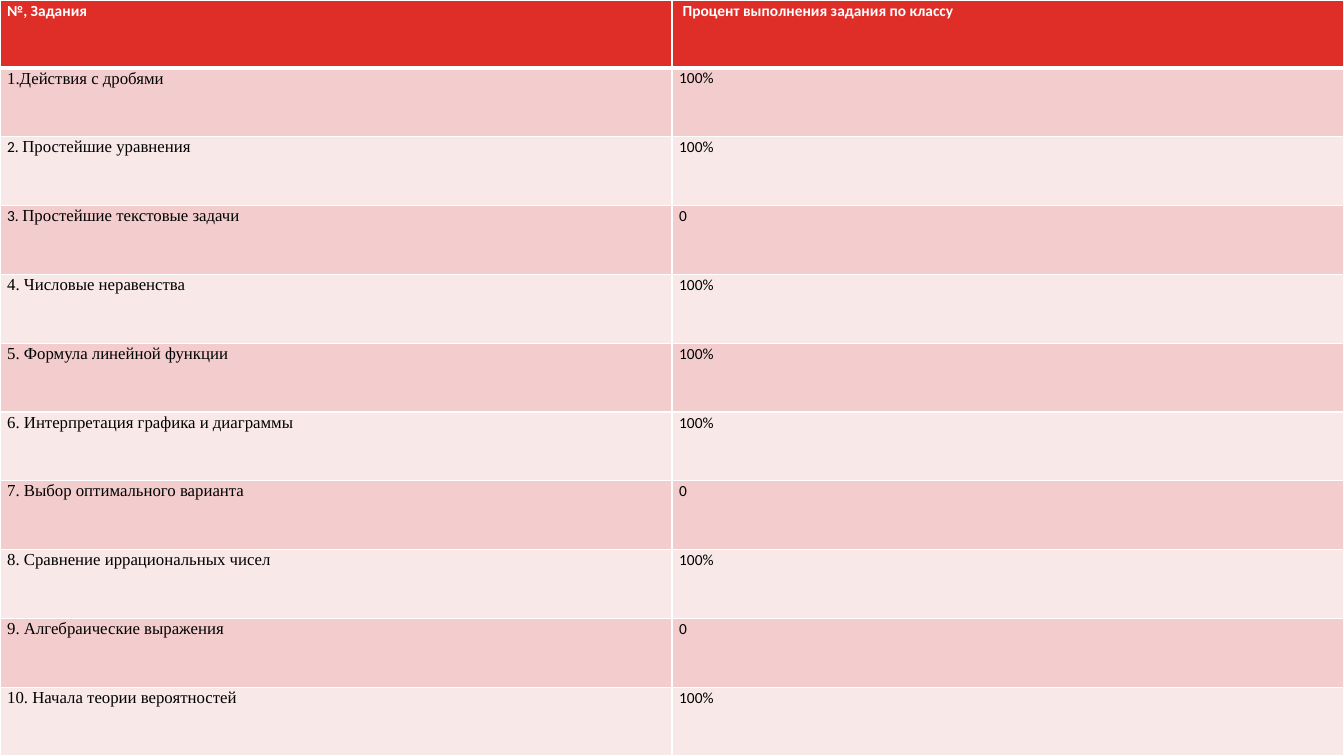
import pptx
import pptx.dml.color
import pptx.oxml
import pptx.oxml.ns
import pptx.util
from pptx.util import Cm

COLORS = {
    "background": "000000",
    "header": "DF2E28",
    "odd_row": "F3CDCD",
    "even_row": "F9E8E8",
    "border": "FFFFFF",
    "header_text": "FFFFFF",
    "text": "000000",
}
SANS = ("Calibri", 11)
SERIF = ("Times New Roman", 12)
SLIDE_WIDTH, SLIDE_HEIGHT = Cm(33.87), Cm(19.05)
HEADER_HEIGHT = Cm(1.71)

HEADERS = ["№, Задания", " Процент выполнения задания по классу"]
# Each task: runs of (text, font), then the share of the class that solved it
TASKS = [
    ([("1.Действия с дробями", SERIF)], "100%"),
    ([("2. ", SANS), ("Простейшие уравнения", SERIF)], "100%"),
    ([("3. ", SANS), ("Простейшие текстовые задачи", SERIF)], "0"),
    ([("4. Числовые неравенства", SERIF)], "100%"),
    ([("5. Формула линейной функции", SERIF)], "100%"),
    ([("6. Интерпретация графика и диаграммы", SERIF)], "100%"),
    ([("7. Выбор оптимального варианта", SERIF)], "0"),
    ([("8. Сравнение иррациональных чисел", SERIF)], "100%"),
    ([("9. Алгебраические выражения", SERIF)], "0"),
    ([("10. Начала теории вероятностей", SERIF)], "100%"),
]


def rgb(name):
    return pptx.dml.color.RGBColor.from_string(COLORS[name])


def set_borders(cell, top=1, bottom=1):
    """Draw the four cell borders, with widths in points."""
    properties = cell._tc.get_or_add_tcPr()
    for side, width in (("L", 1), ("R", 1), ("T", top), ("B", bottom)):
        properties.append(pptx.oxml.parse_xml(
            f'<a:ln{side} {pptx.oxml.ns.nsdecls("a")} w="{pptx.util.Pt(width)}">'
            f'<a:solidFill><a:srgbClr val="{COLORS["border"]}"/></a:solidFill>'
            f'</a:ln{side}>'))


def fill_cell(cell, runs, fill, color, bold=False):
    cell.margin_left = cell.margin_right = Cm(0.18)
    cell.margin_top = cell.margin_bottom = 0
    cell.fill.solid()
    cell.fill.fore_color.rgb = rgb(fill)
    paragraph = cell.text_frame.paragraphs[0]
    paragraph.line_spacing = 1.07
    for text, (font_name, size) in runs:
        run = paragraph.add_run()
        run.text = text
        run.font.name = font_name
        run.font.size = pptx.util.Pt(size)
        run.font.bold = bold
        run.font.color.rgb = rgb(color)


def add_results_table(slide):
    table = slide.shapes.add_table(
        len(TASKS) + 1, len(HEADERS), 0, 0, SLIDE_WIDTH, SLIDE_HEIGHT).table
    table.rows[0].height = HEADER_HEIGHT
    for column, header in enumerate(HEADERS):
        cell = table.cell(0, column)
        set_borders(cell, bottom=3)
        fill_cell(cell, [(header, SANS)], "header", "header_text", bold=True)

    row_height = (SLIDE_HEIGHT - HEADER_HEIGHT) // len(TASKS)
    for row, (task_runs, percent) in enumerate(TASKS, start=1):
        table.rows[row].height = row_height
        fill = "odd_row" if row % 2 else "even_row"
        for column, runs in enumerate((task_runs, [(percent, SANS)])):
            cell = table.cell(row, column)
            set_borders(cell, top=3 if row == 1 else 1)
            fill_cell(cell, runs, fill, "text")


def main():
    presentation = pptx.Presentation()
    presentation.slide_width = SLIDE_WIDTH
    presentation.slide_height = SLIDE_HEIGHT
    slide = presentation.slides.add_slide(presentation.slide_layouts[6])
    slide.background.fill.solid()
    slide.background.fill.fore_color.rgb = rgb("background")
    add_results_table(slide)
    presentation.save("out.pptx")


if __name__ == "__main__":
    main()
